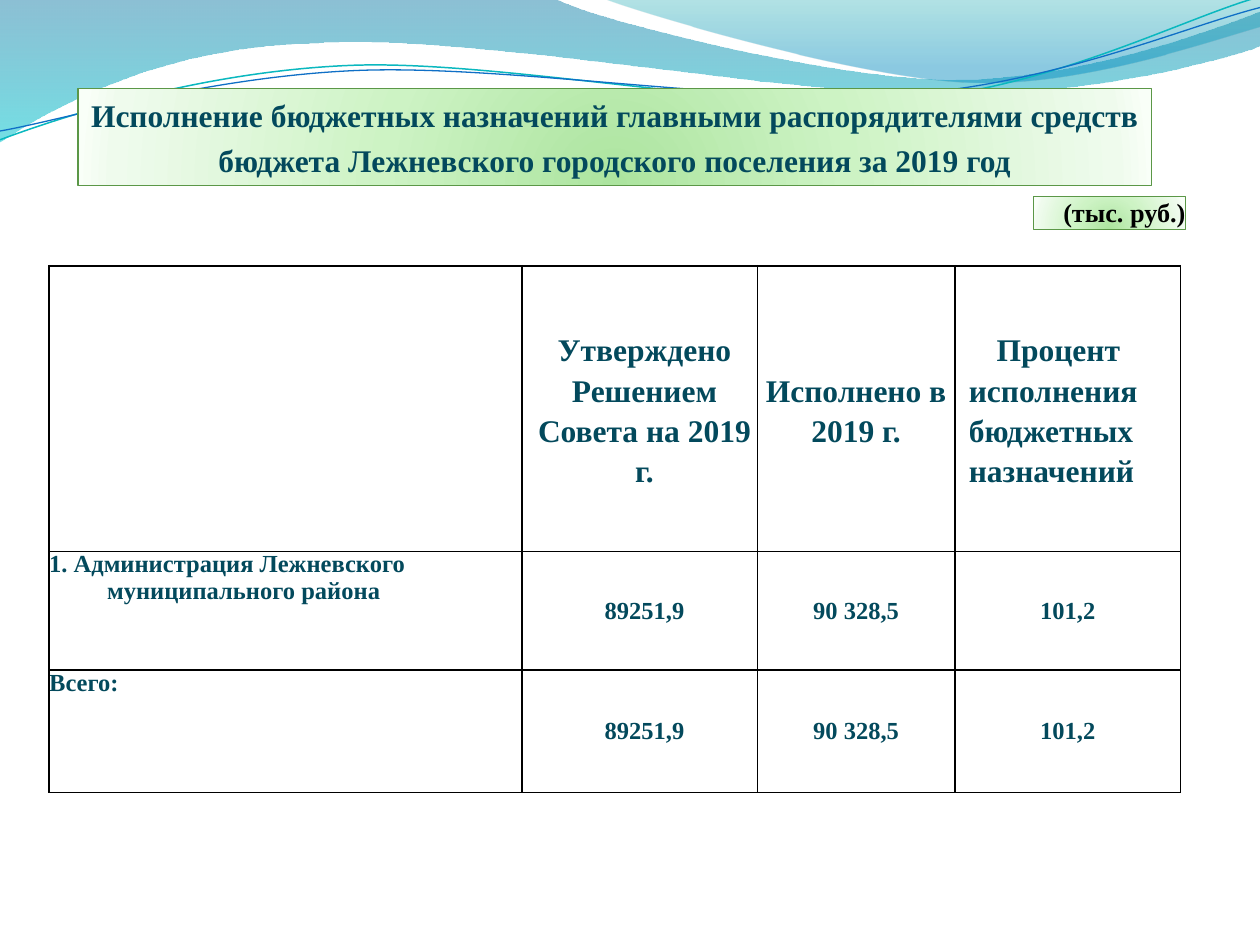
from pptx import Presentation
from pptx.dml.color import RGBColor
from pptx.enum.text import MSO_ANCHOR, MSO_AUTO_SIZE, PP_ALIGN
from pptx.oxml import parse_xml
from pptx.oxml.ns import nsdecls, qn
from pptx.util import Inches, Pt

FONT, INK, BLACK = "Times New Roman", "03495C", "000000"
CENTER, LEFT, RIGHT = PP_ALIGN.CENTER, PP_ALIGN.LEFT, PP_ALIGN.RIGHT

TITLE = "Исполнение бюджетных назначений главными распорядителями средств бюджета Лежневского городского поселения за 2019 год"
UNITS = "(тыс. руб.)"
HEADERS = [
    [],
    [("Утверждено Решением Совета на 2019 г.", CENTER, 0.08)],
    [("Исполнено в 2019 г.", CENTER, 0)],
    [("Процент", LEFT, 0.33), ("исполнения", LEFT, 0.11),
     ("бюджетных", LEFT, 0.11), ("назначений", LEFT, 0.11)],
]
BUDGET = [
    ("1. Администрация Лежневского муниципального района", "89251,9", "90 328,5", "101,2"),
    ("Всего:", "89251,9", "90 328,5", "101,2"),
]
VALUE_INDENTS = [0.08, 0, 0]
COLUMNS, ROWS = [3.75, 1.87, 1.57, 1.79], [2.27, 0.94, 0.97]
VERTICAL_RULES, HORIZONTAL_RULES = [1.25, 1.25, 0.5, 1.25, 1.25], [1.25, 0.5, 1.25, 0.5]

RADIAL = ('<a:path path="circle"><a:fillToRect l="50000" t="130000" '
          'r="50000" b="-30000"/></a:path>')
DOWNWARD = '<a:lin ang="5400000" scaled="1"/>'
GREEN = [(0, "ACE49F", 100), (43, "CDF3C4", 100), (93, "EFFBED", 100), (100, "F9FFF8", 100)]

BANDS = [
    ([(0, 0), (4.4, -0.01), (4.76, 0.17, 6.64, 0.63, 7.58, 0.63),
      (8.53, 0.63, 9.58, 0.26, 10, 0.09), (10.01, 0.36),
      (9.83, 0.44, 8.7, 0.76, 7.46, 0.75), (6.22, 0.75, 3.82, 0.28, 2.57, 0.34),
      (1.29, 0.36, 0.46, 0.83, -0.01, 1.13)],
     [(0, "0074A1", 45), (100, "00C6CF", 55)]),
    ([(4.79, -0.01), (5.09, 0.11, 6.82, 0.62, 7.69, 0.65),
      (8.56, 0.69, 9.61, 0.32, 10, 0.21), (10, 0)],
     [(0, "00A1A9", 30), (80, "008BBF", 45)]),
]
STRANDS = [
    ([(0, 1.11), (0.48, 0.93, 1.58, 0.57, 2.77, 0.52),
      (3.95, 0.47, 5.93, 0.89, 7.13, 0.8), (8.33, 0.71, 9.38, 0.15, 9.98, -0.02)],
     "0AB8BF", 0.85),
    ([(0, 1.04), (0.47, 0.96, 1.64, 0.61, 2.83, 0.56),
      (4.03, 0.51, 5.97, 0.84, 7.17, 0.75), (8.36, 0.67, 9.41, 0.21, 10, 0.06)],
     "0F6FC6", 0.75),
]


def rgb(color):
    """Turn a hex string into a colour."""
    return RGBColor.from_string(color)


def add_wave(slide, segments, close):
    """Draw one wave outline of corners and cubic curves."""
    anchors = [tuple(map(Inches, segment[-2:])) for segment in segments]
    builder = slide.shapes.build_freeform(*anchors[0], scale=1.0)
    builder.add_line_segments(anchors[1:], close=close)
    wave = builder.convert_to_shape()
    wave.shadow.inherit = False
    left, top = builder.shape_offset_x, builder.shape_offset_y
    outline = next(wave.element.iter(qn("a:path")))
    for straight, segment in zip(outline.findall(qn("a:lnTo")), segments[1:]):
        if len(segment) == 6:
            knots = "".join(
                f'<a:pt x="{Inches(x) - left}" y="{Inches(y) - top}"/>'
                for x, y in zip(segment[::2], segment[1::2]))
            outline.replace(straight, parse_xml(
                f'<a:cubicBezTo {nsdecls("a")}>{knots}</a:cubicBezTo>'))
    return wave


def fill_gradient(shape, stops, direction):
    """Fill a shape with gradient stops of position, colour and opacity."""
    shape.fill.background()
    properties = shape.element.spPr
    marks = "".join(
        f'<a:gs pos="{pos * 1000}"><a:srgbClr val="{color}">'
        f'<a:alpha val="{opacity * 1000}"/></a:srgbClr></a:gs>'
        for pos, color, opacity in stops)
    properties.replace(properties.find(qn("a:noFill")), parse_xml(
        f'<a:gradFill {nsdecls("a")} rotWithShape="1"><a:gsLst>{marks}</a:gsLst>'
        f'{direction}</a:gradFill>'))


def write(paragraph, text, size, align=LEFT, color=INK, spacing=None, left=0, hanging=0):
    """Write one bold run with its paragraph layout."""
    paragraph.alignment = align
    paragraph.line_spacing = Pt(spacing) if spacing else 1.0
    layout = paragraph._p.get_or_add_pPr()
    layout.set("marL", str(Inches(left)))
    layout.set("indent", str(Inches(-hanging)))
    run = paragraph.add_run()
    run.text = text
    run.font.name, run.font.size, run.font.bold = FONT, Pt(size), True
    run.font.color.rgb = rgb(color)


def style_plate(plate, left, top, width, height, wrap):
    """Place a green plate with a thin border."""
    plate.left, plate.top, plate.width, plate.height = map(Inches, (left, top, width, height))
    fill_gradient(plate, GREEN, RADIAL)
    plate.line.color.rgb = rgb("5B9747")
    plate.line.width = Pt(0.75)
    plate.shadow.inherit = False
    frame = plate.text_frame
    frame.auto_size, frame.word_wrap = MSO_AUTO_SIZE.NONE, wrap
    frame.vertical_anchor = MSO_ANCHOR.TOP
    frame.margin_left = frame.margin_top = frame.margin_right = frame.margin_bottom = 0
    return frame.paragraphs[0]


def style_cell(cell, row, column):
    """Clear the cell's fill and margins and rule its four sides."""
    cell.margin_left = cell.margin_top = cell.margin_right = cell.margin_bottom = 0
    cell.vertical_anchor = MSO_ANCHOR.MIDDLE if column else MSO_ANCHOR.TOP
    cell.fill.background()
    sides = [("lnL", VERTICAL_RULES[column]), ("lnR", VERTICAL_RULES[column + 1]),
             ("lnT", HORIZONTAL_RULES[row]), ("lnB", HORIZONTAL_RULES[row + 1])]
    for position, (side, width) in enumerate(sides):
        cell._tc.get_or_add_tcPr().insert(position, parse_xml(
            f'<a:{side} {nsdecls("a")} w="{Pt(width)}"><a:solidFill>'
            f'<a:srgbClr val="{BLACK}"/></a:solidFill></a:{side}>'))


def add_budget_table(slide):
    """Add the table of approved and executed budget."""
    table = slide.shapes.add_table(
        len(ROWS), len(COLUMNS), Inches(0.39), Inches(2.11),
        Inches(sum(COLUMNS)), Inches(sum(ROWS))).table
    table.first_row = table.horz_banding = False
    for column, width in zip(table.columns, COLUMNS):
        column.width = Inches(width)
    for row, height in zip(table.rows, ROWS):
        row.height = Inches(height)
    for row in range(len(ROWS)):
        for column in range(len(COLUMNS)):
            style_cell(table.cell(row, column), row, column)
    for column, lines in enumerate(HEADERS):
        frame = table.cell(0, column).text_frame
        for number, (text, align, left) in enumerate(lines):
            paragraph = frame.add_paragraph() if number else frame.paragraphs[0]
            write(paragraph, text, 18, align, spacing=23, left=left)
    for row, (name, *values) in enumerate(BUDGET, 1):
        write(table.cell(row, 0).text_frame.paragraphs[0], name, 14,
              spacing=15, left=0.46, hanging=0.46)
        for column, (value, left) in enumerate(zip(values, VALUE_INDENTS), 1):
            write(table.cell(row, column).text_frame.paragraphs[0], value, 14,
                  CENTER, left=left)


def main():
    """Build the budget execution slide."""
    deck = Presentation()
    deck.slide_width, deck.slide_height = Inches(10), Inches(7.5)
    slide = deck.slides.add_slide(deck.slide_layouts[5])
    for segments, stops in BANDS:
        band = add_wave(slide, segments, True)
        fill_gradient(band, stops, DOWNWARD)
        band.line.fill.background()
    for segments, color, width in STRANDS:
        strand = add_wave(slide, segments, False)
        strand.fill.background()
        strand.line.color.rgb = rgb(color)
        strand.line.width = Pt(width)
    title = slide.shapes.title
    slide.shapes.element.append(title.element)
    write(style_plate(title, 0.62, 0.7, 8.52, 0.77, True), TITLE, 18, CENTER, spacing=25.9)
    units = slide.shapes.add_textbox(0, 0, 0, 0)
    write(style_plate(units, 8.2, 1.56, 1.21, 0.26, False), UNITS, 15, RIGHT, BLACK)
    add_budget_table(slide)
    deck.save("out.pptx")


if __name__ == "__main__":
    main()
